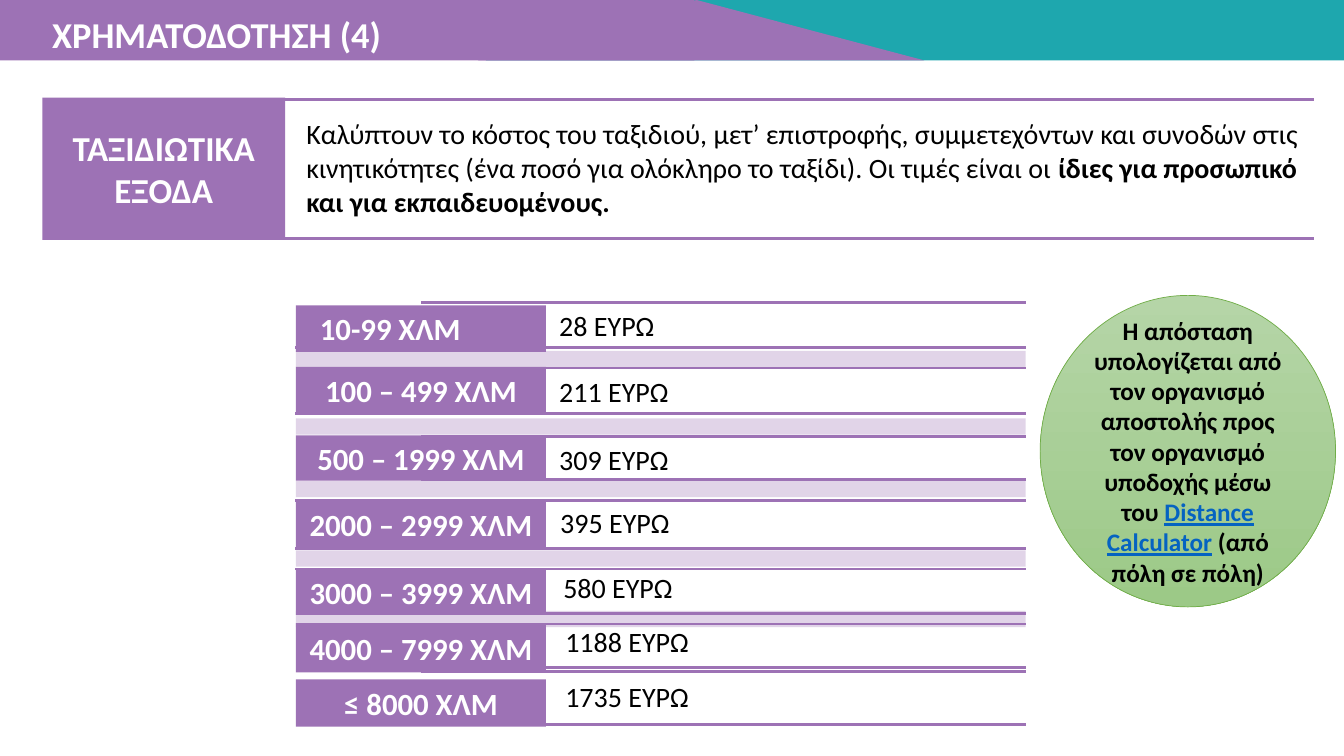
import pptx
import pptx.util
import pptx.dml.color
import pptx.enum.shapes
import pptx.enum.text
import pptx.oxml.ns
from lxml import etree

Pt = pptx.util.Pt
Shape = pptx.enum.shapes.MSO_SHAPE
Align = pptx.enum.text.PP_ALIGN

COLORS = {
    "purple": "9D72B5",
    "teal": "1EA7AE",
    "white": "FFFFFF",
    "black": "000000",
    "link": "0563C1",
    "green_top": "B5D5A7",
    "green_bottom": "9CC987",
    "green_line": "70AD47",
}


def rgb(name):
    return pptx.dml.color.RGBColor.from_string(COLORS[name])


class SlideBuilder:
    """Holds the style and the current slide, and adds each kind of element."""

    font_name = "Calibri"
    line_width = 2

    def __init__(self, slide):
        self.slide = slide

    def shape(self, kind, left, top, width, height, fill, alpha=None):
        shape = self.slide.shapes.add_shape(kind, Pt(left), Pt(top), Pt(width), Pt(height))
        shape.shadow.inherit = False
        shape.fill.solid()
        shape.fill.fore_color.rgb = rgb(fill)
        shape.line.fill.background()
        if alpha is not None:
            color = shape._element.spPr.find(".//" + pptx.oxml.ns.qn("a:srgbClr"))
            etree.SubElement(color, pptx.oxml.ns.qn("a:alpha"), val=str(alpha * 1000))
        return shape

    def set_text(self, frame, runs, size, color, bold=None, align=Align.LEFT):
        paragraph = frame.paragraphs[0]
        paragraph.alignment = align
        paragraph.font.name = self.font_name
        paragraph.font.size = Pt(size)
        paragraph.font.color.rgb = rgb(color)
        paragraph.font.bold = bold
        for text in runs:
            paragraph.add_run().text = text
        return paragraph

    def label(self, text, left, top, width, height, size, margin_right=7.2):
        shape = self.shape(Shape.RECTANGLE, left, top, width, height, "purple")
        frame = shape.text_frame
        frame.vertical_anchor = pptx.enum.text.MSO_ANCHOR.MIDDLE
        frame.margin_right = Pt(margin_right)
        self.set_text(frame, [text], size, "white", True, Align.CENTER)

    def text(self, runs, left, top, width, height, size, color="black", bold=None, wrap=True):
        box = self.slide.shapes.add_textbox(Pt(left), Pt(top), Pt(width), Pt(height))
        box.text_frame.word_wrap = wrap
        box.text_frame.auto_size = pptx.enum.text.MSO_AUTO_SIZE.SHAPE_TO_FIT_TEXT
        return self.set_text(box.text_frame, runs, size, color, bold)

    def rule(self, left, right, y):
        line = self.slide.shapes.add_connector(
            pptx.enum.shapes.MSO_CONNECTOR.STRAIGHT, Pt(left), Pt(y), Pt(right), Pt(y))
        line.line.color.rgb = rgb("purple")
        line.line.width = Pt(self.line_width)
        etree.SubElement(line._element.spPr, pptx.oxml.ns.qn("a:effectLst"))

    def circle_note(self, runs, left, top, width, height, size):
        circle = self.shape(Shape.OVAL, left, top, width, height, "green_top")
        circle.fill.gradient()
        circle.fill.gradient_angle = 270
        for stop, name in zip(circle.fill.gradient_stops, ("green_top", "green_bottom")):
            stop.color.rgb = rgb(name)
        circle.line.color.rgb = rgb("green_line")
        circle.line.width = Pt(0.5)
        circle.text_frame.vertical_anchor = pptx.enum.text.MSO_ANCHOR.MIDDLE
        return self.set_text(circle.text_frame, runs, size, "black", True, Align.CENTER)


LABEL_LEFT, LABEL_WIDTH = 211.4, 178.6
BAND_WIDTH, BAND_HEIGHT = 521.3, 11.7
FULL, HALF, RULE_RIGHT = 211, 301, 732.6

FARES = [
    ("10-99 ΧΛΜ", "28 ΕΥΡΩ", 218.2, 33.1, 392.4, 216.7, (HALF, 216), (FULL, 248.4), 250.6),
    ("100 – 499 ΧΛΜ", "211 ΕΥΡΩ", 262.1, 33.1, 392.4, 264.2, (HALF, 262.8), (FULL, 295.2), 298.8),
    ("500 – 1999 ΧΛΜ", "309 ΕΥΡΩ", 311, 32.4, 392.4, 312.5, (HALF, 311.8), (HALF, 342.7), 343.4),
    ("2000 – 2999 ΧΛΜ", "395 ΕΥΡΩ", 357.1, 35.3, 393.1, 357.8, (FULL, 357.5), (FULL, 392), 393.1),
    ("3000 – 3999 ΧΛΜ", "580 ΕΥΡΩ", 406.1, 33.1, 395.3, 403.9, (FULL, 406.5), (HALF, 438.5), 436.3),
    ("4000 – 7999 ΧΛΜ", "1188 ΕΥΡΩ", 445, 35.3, 396.7, 442.8, (HALF, 445.7), (HALF, 479.5), None),
    ("≤ 8000 ΧΛΜ", "1735 ΕΥΡΩ", 485.3, 33.8, 396.7, 481.7, (HALF, 476.6), (HALF, 517.7), None),
]


def main():
    presentation = pptx.Presentation()
    presentation.slide_width, presentation.slide_height = Pt(960), Pt(540)
    builder = SlideBuilder(presentation.slides.add_slide(presentation.slide_layouts[6]))

    builder.shape(Shape.RECTANGLE, 347, 0, 613, 43.2, "teal")
    builder.shape(Shape.RECTANGLE, 0, 0, 496, 43.2, "purple")
    slope = builder.shape(Shape.ISOSCELES_TRIANGLE, 341.3, 0, 319, 43.2, "purple")
    slope.adjustments[0] = 0.49
    builder.text(["ΧΡΗΜΑΤΟΔΟΤΗΣΗ (4)"], 30.2, 5, 252, 38.9, 26, "white", True, wrap=False)

    builder.label("ΤΑΞΙΔΙΩΤΙΚΑ ΕΞΟΔΑ", 30.2, 69.8, 173.5, 101.5, 25)
    for y in (71.3, 170.6):
        builder.rule(185.8, 938.9, y)
    summary = builder.text([
        "Καλύπτουν το κόστος του ταξιδιού, μετ’ επιστροφής, συμμετεχόντων και συνοδών στις "
        "κινητικότητες (ένα ποσό για ολόκληρο το ταξίδι). Οι τιμές είναι οι ",
        "ίδιες για προσωπικό και για εκπαιδευομένους.",
    ], 211.7, 79.9, 733, 79.9, 20)
    summary.runs[1].font.bold = True

    for index, fare in enumerate(FARES):
        distance, price, top, height, price_left, price_top, upper, lower, band_top = fare
        builder.label(distance, LABEL_LEFT, top, LABEL_WIDTH, height, 22,
                      margin_right=51 if index == 0 else 7.2)
        for left, y in (upper, lower):
            builder.rule(left, RULE_RIGHT, y)
        builder.text([price], price_left, price_top, 340, 31.7, 20)
        if band_top is not None:
            builder.shape(Shape.RECTANGLE, LABEL_LEFT, band_top, BAND_WIDTH, BAND_HEIGHT,
                          "purple", alpha=30)

    note = builder.circle_note([
        "Η απόσταση υπολογίζεται από τον οργανισμό αποστολής προς τον οργανισμό υποδοχής μέσω του ",
        "Distance Calculator",
        " (από πόλη σε πόλη)",
    ], 743, 211, 211, 222.5, 18)
    note.runs[1].font.color.rgb = rgb("link")
    note.runs[1].font.underline = True

    presentation.save("out.pptx")


if __name__ == "__main__":
    main()
